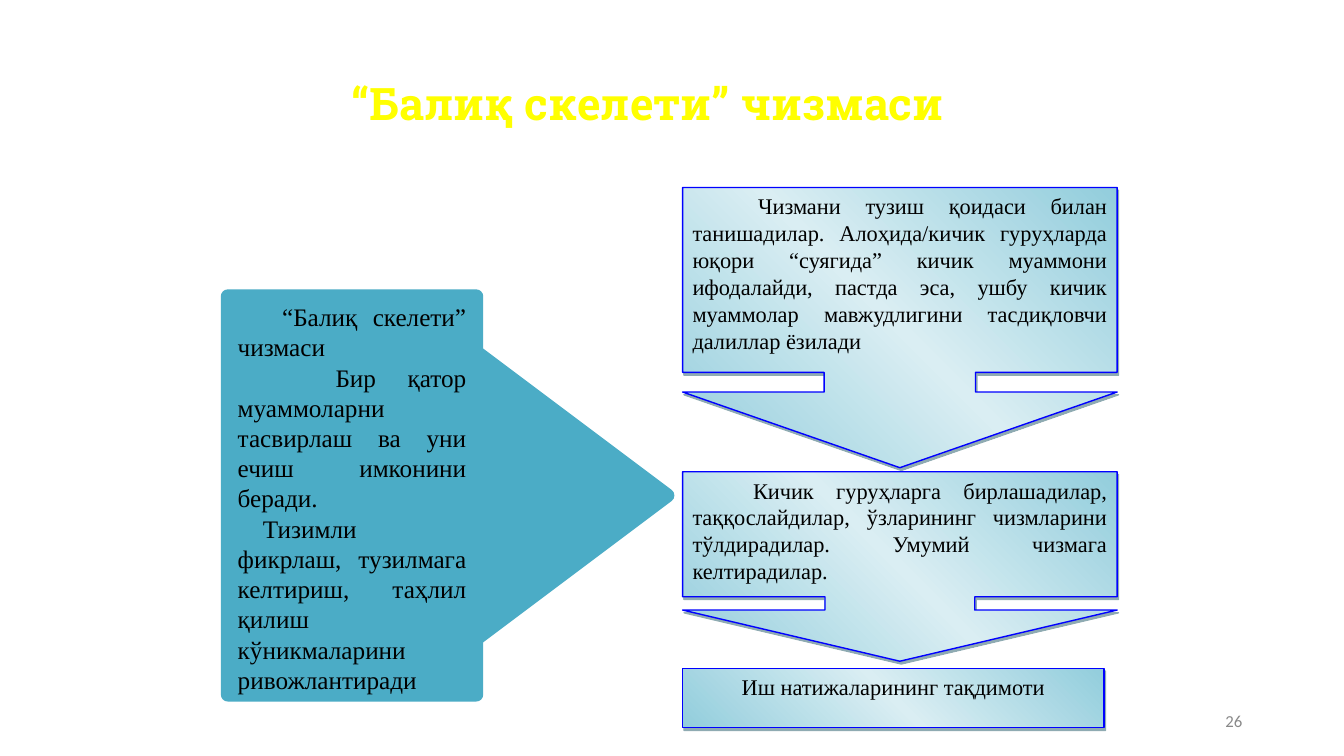
"""Build the fishbone diagram slide with callouts and a result box."""
import lxml.etree
import pptx
import pptx.dml.color
import pptx.enum.shapes
import pptx.enum.text
import pptx.oxml
import pptx.oxml.ns
import pptx.util

Inches = pptx.util.Inches
Pt = pptx.util.Pt
Shape = pptx.enum.shapes.MSO_SHAPE
Align = pptx.enum.text.PP_ALIGN
Anchor = pptx.enum.text.MSO_ANCHOR


def color(value):
    return pptx.dml.color.RGBColor.from_string(value)


def write(paragraph, text, size, font="Times New Roman", fill="000000",
          bold=False, align=Align.LEFT, after=0, indent=0):
    paragraph.alignment = align
    paragraph.space_after = Pt(after)
    if indent:
        paragraph._p.get_or_add_pPr().set("indent", str(Inches(indent)))
    run = paragraph.add_run()
    run.text = text
    run.font.name = font
    run.font.size = Pt(size)
    run.font.bold = bold
    run.font.color.rgb = color(fill)


class FishboneSlide:
    teal = "4BACC6"
    border = "0000FF"
    shade = "205867"
    gradient = ((0, "92CDDC"), (50, "DAEEF3"), (100, "92CDDC"))

    def __init__(self, presentation):
        self.slide = presentation.slides.add_slide(presentation.slide_layouts[6])

    def label(self, box, text, size, anchor=Anchor.TOP, grow=False, **style):
        shape = self.slide.shapes.add_textbox(*map(Inches, box))
        frame = shape.text_frame
        frame.word_wrap = True
        frame.vertical_anchor = anchor
        if grow:
            frame.auto_size = pptx.enum.text.MSO_AUTO_SIZE.SHAPE_TO_FIT_TEXT
        write(frame.paragraphs[0], text, size, **style)

    def panel(self, kind, box, paragraphs, size, adjustments=(), line=None,
              width=1, **style):
        shape = self.slide.shapes.add_shape(kind, *map(Inches, box))
        for index, value in enumerate(adjustments):
            shape.adjustments[index] = value
        shape.shadow.inherit = False
        shape.fill.solid()
        shape.fill.fore_color.rgb = color(self.teal)
        shape.line.color.rgb = color(line or self.border)
        shape.line.width = Pt(width)
        frame = shape.text_frame
        frame.word_wrap = True
        frame.vertical_anchor = Anchor.TOP
        for index, (text, indent) in enumerate(paragraphs):
            paragraph = frame.add_paragraph() if index else frame.paragraphs[0]
            write(paragraph, text, size, indent=indent, **style)
        return shape

    def glossy_panel(self, kind, box, paragraphs, **style):
        shape = self.panel(kind, box, paragraphs, 16, after=10, **style)
        properties = shape._element.spPr
        namespace = pptx.oxml.ns.nsdecls("a")
        stops = "".join(
            f'<a:gs pos="{position * 1000}"><a:srgbClr val="{value}"/></a:gs>'
            for position, value in self.gradient)
        solid = properties.find(pptx.oxml.ns.qn("a:solidFill"))
        properties.replace(solid, pptx.oxml.parse_xml(
            f'<a:gradFill {namespace}><a:gsLst>{stops}</a:gsLst>'
            f'<a:lin ang="{315 * 60000}" scaled="1"/></a:gradFill>'))
        effects = properties.find(pptx.oxml.ns.qn("a:effectLst"))
        effects.append(pptx.oxml.parse_xml(
            f'<a:outerShdw {namespace} blurRad="0" dist="{Pt(2.2)}" '
            f'dir="{63 * 60000}" algn="ctr" rotWithShape="0">'
            f'<a:srgbClr val="{self.shade}"><a:alpha val="50000"/></a:srgbClr>'
            '</a:outerShdw>'))


def main():
    presentation = pptx.Presentation()
    presentation.slide_width = Inches(13.33)
    presentation.slide_height = Inches(7.5)
    page = FishboneSlide(presentation)

    page.label((9.42, 6.95, 3, 0.4), "26", 12, anchor=Anchor.MIDDLE,
               font="Calibri", fill="898989", align=Align.RIGHT)

    steps = (
        (1.86, 2.78, (0.54, 0.8, 0.27, 0.66), 0.65,
         "Чизмани тузиш қоидаси билан танишадилар. Алоҳида/кичик гуруҳларда "
         "юқори “суягида” кичик муаммони ифодалайди, пастда эса, ушбу кичик "
         "муаммолар мавжудлигини тасдиқловчи далиллар ёзилади"),
        (4.68, 1.88, (0.79, 1.18, 0.27, 0.66), 0.6,
         "Кичик гуруҳларга бирлашадилар, таққослайдилар, ўзларининг "
         "чизмларини тўлдирадилар. Умумий чизмага келтирадилар."),
    )
    for top, height, adjustments, indent, text in steps:
        page.glossy_panel(Shape.DOWN_ARROW_CALLOUT, (6.77, top, 4.31, height),
                          [(text, indent)], adjustments=adjustments,
                          align=Align.JUSTIFY)

    purposes = (
        ("“Балиқ скелети” чизмаси", 0.44),
        ("Бир қатор муаммоларни тасвирлаш ва уни ечиш имконини беради.", 0.97),
        ("Тизимли фикрлаш, тузилмага келтириш, таҳлил қилиш "
         "кўникмаларини ривожлантиради", 0.25),
    )
    page.panel(Shape.RIGHT_ARROW_CALLOUT, (2.26, 2.94, 4.36, 3.95), purposes, 18,
               adjustments=(0.21, 0.36, 0.48, 0.66), line=page.teal, width=10,
               align=Align.JUSTIFY)

    page.glossy_panel(Shape.RECTANGLE, (6.77, 6.63, 4.18, 0.59),
                      [("Иш натижаларининг тақдимоти", 0)], align=Align.CENTER)

    page.label((3.39, 0.7, 7.24, 0.63), "“Балиқ скелети” чизмаси", 32, grow=True,
               font="Roboto Slab", fill="FFFF00", bold=True)

    presentation.save("out.pptx")


if __name__ == "__main__":
    main()
